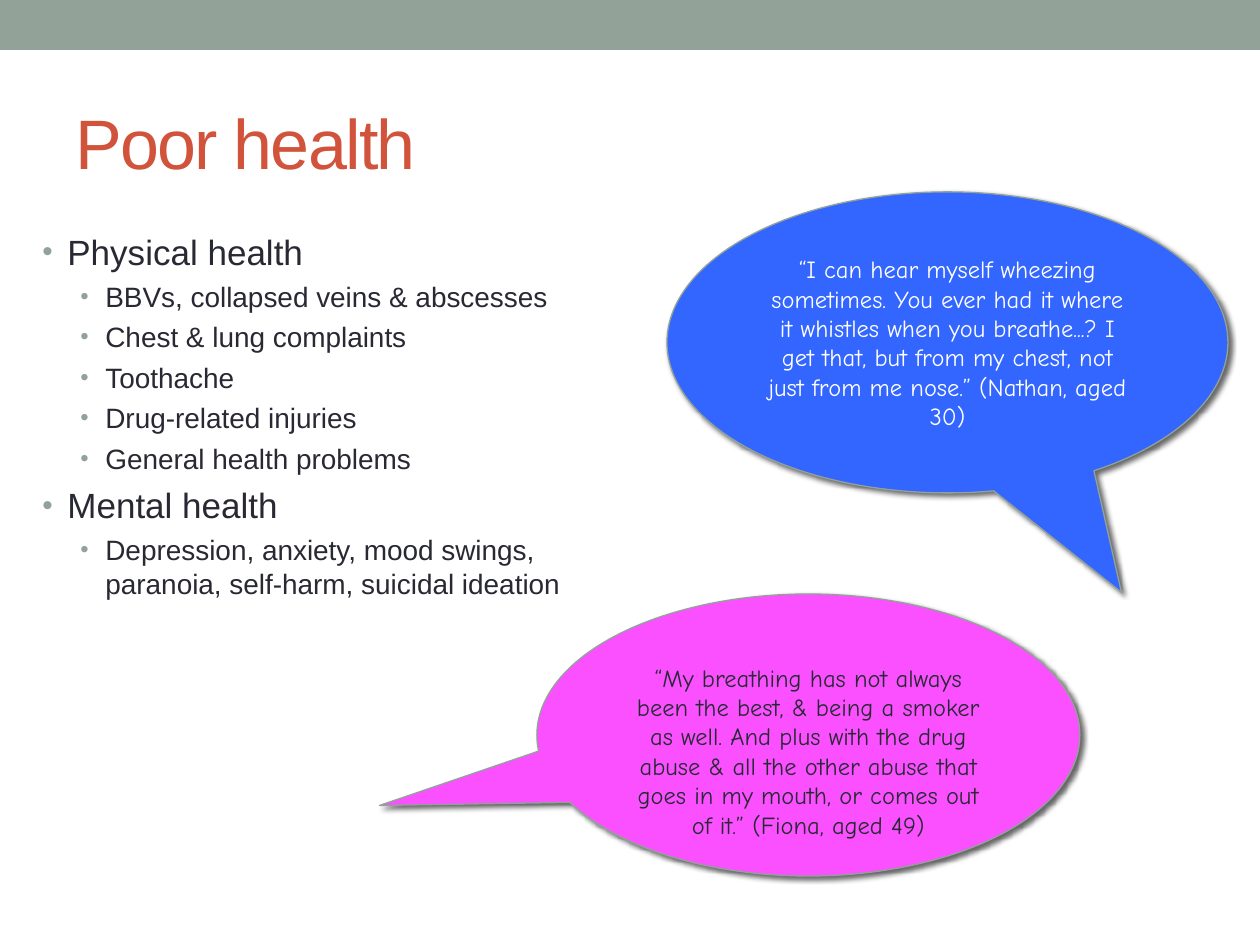
from dataclasses import dataclass

from lxml.etree import SubElement
from pptx import Presentation
from pptx.dml.color import RGBColor
from pptx.enum.shapes import MSO_SHAPE as Shape
from pptx.enum.text import MSO_ANCHOR as Anchor, PP_ALIGN as Align
from pptx.oxml.ns import qn
from pptx.util import Emu, Pt

PX_PER_INCH = 126


def px(length):
    return Emu(round(length * 914400 / PX_PER_INCH))


@dataclass(frozen=True)
class Theme:
    sage: str = "93A299"
    rust: str = "D2533C"
    ink: str = "292934"
    white: str = "FFFFFF"
    blue: str = "3366FF"
    pink: str = "FA50FF"
    black: str = "000000"
    sans: str = "Arial"
    hand: str = "Comic Neue"
    title_size: int = 40
    level_sizes: tuple = (20, 16)
    quote_size: int = 14


class SlideBuilder:
    def __init__(self, page, theme):
        self.page = page
        self.theme = theme

    def fill(self, shape, color):
        shape.shadow.inherit = False
        shape.fill.solid()
        shape.fill.fore_color.rgb = RGBColor.from_string(color)

    def span(self, para, text, font, size, color):
        span = para.add_run()
        span.text = text
        span.font.name = font
        span.font.size = Pt(size)
        span.font.color.rgb = RGBColor.from_string(color)
        return span

    def text_box(self, left, top, width, height):
        box = self.page.shapes.add_textbox(*map(px, (left, top, width, height)))
        box.text_frame.word_wrap = True
        return box.text_frame

    def band(self, left, top, width, height):
        band = self.page.shapes.add_shape(
            Shape.RECTANGLE, *map(px, (left, top, width, height)))
        self.fill(band, self.theme.sage)
        band.line.fill.background()

    def title(self, left, top, width, height, text):
        frame = self.text_box(left, top, width, height)
        frame.vertical_anchor = Anchor.MIDDLE
        span = self.span(frame.paragraphs[0], text, self.theme.sans,
                         self.theme.title_size, self.theme.rust)
        span.font._element.set("spc", "-100")

    def bullet(self, para, level):
        para.level = level
        props = para._p.get_or_add_pPr()
        props.set("marL", str(px((25, 63)[level])))
        props.set("indent", str(px(-25)))
        color = SubElement(props, qn("a:buClr"))
        SubElement(color, qn("a:srgbClr"), val=self.theme.sage)
        SubElement(props, qn("a:buSzPct"), val="85000")
        SubElement(props, qn("a:buFont"), typeface=self.theme.sans)
        SubElement(props, qn("a:buChar"), char="•")

    def bullets(self, left, top, width, height, items):
        frame = self.text_box(left, top, width, height)
        for index, (level, text) in enumerate(items):
            para = frame.add_paragraph() if index else frame.paragraphs[0]
            size = self.theme.level_sizes[level]
            para.space_before = Pt(size / 4)
            self.bullet(para, level)
            self.span(para, text, self.theme.sans, size, self.theme.ink)

    def drop_shadow(self, shape):
        effects = shape._element.spPr.find(qn("a:effectLst"))
        shadow = SubElement(effects, qn("a:outerShdw"), blurRad=str(Pt(3)),
                            dist=str(Pt(2)), dir=str(45 * 60000),
                            algn="ctr", rotWithShape="0")
        color = SubElement(shadow, qn("a:srgbClr"), val=self.theme.black)
        SubElement(color, qn("a:alpha"), val="60000")

    def quote(self, left, top, width, height, tip, text, fill, color, inset_top=6):
        bubble = self.page.shapes.add_shape(
            Shape.OVAL_CALLOUT, *map(px, (left, top, width, height)))
        for index, offset in enumerate(tip):
            bubble.adjustments[index] = offset
        self.fill(bubble, fill)
        bubble.line.color.rgb = RGBColor.from_string(self.theme.sage)
        bubble.line.width = Pt(0.75)
        self.drop_shadow(bubble)
        frame = bubble.text_frame
        frame.word_wrap = True
        frame.vertical_anchor = Anchor.MIDDLE
        frame.margin_top = px(inset_top)
        para = frame.paragraphs[0]
        para.alignment = Align.CENTER
        self.span(para, text, self.theme.hand, self.theme.quote_size, color)


def main():
    theme = Theme()
    deck = Presentation()
    deck.slide_width, deck.slide_height = px(1260), px(945)
    builder = SlideBuilder(deck.slides.add_slide(deck.slide_layouts[6]), theme)

    builder.band(0, 0, 1260, 50)
    builder.title(63, 73, 1134, 136, "Poor health")
    builder.bullets(30, 224, 578, 650, [
        (0, "Physical health"),
        (1, "BBVs, collapsed veins & abscesses"),
        (1, "Chest & lung complaints"),
        (1, "Toothache"),
        (1, "Drug-related injuries"),
        (1, "General health problems"),
        (0, "Mental health"),
        (1, "Depression, anxiety, mood swings, paranoia, self-harm, "
            "suicidal ideation"),
    ])
    builder.quote(
        537, 594, 543, 282, (-0.79, 0.25),
        "“My breathing has not always been the best, & being a smoker as well. "
        "And plus with the drug abuse & all the other abuse that goes in my "
        "mouth, or comes out of it.” (Fiona, aged 49)",
        theme.pink, theme.ink, inset_top=38)
    builder.quote(
        667, 192, 561, 301, (0.31, 0.83),
        "“I can hear myself wheezing sometimes. You ever had it where it "
        "whistles when you breathe...? I get that, but from my chest, not just "
        "from me nose.” (Nathan, aged 30)",
        theme.blue, theme.white)

    deck.save("out.pptx")


if __name__ == "__main__":
    main()
